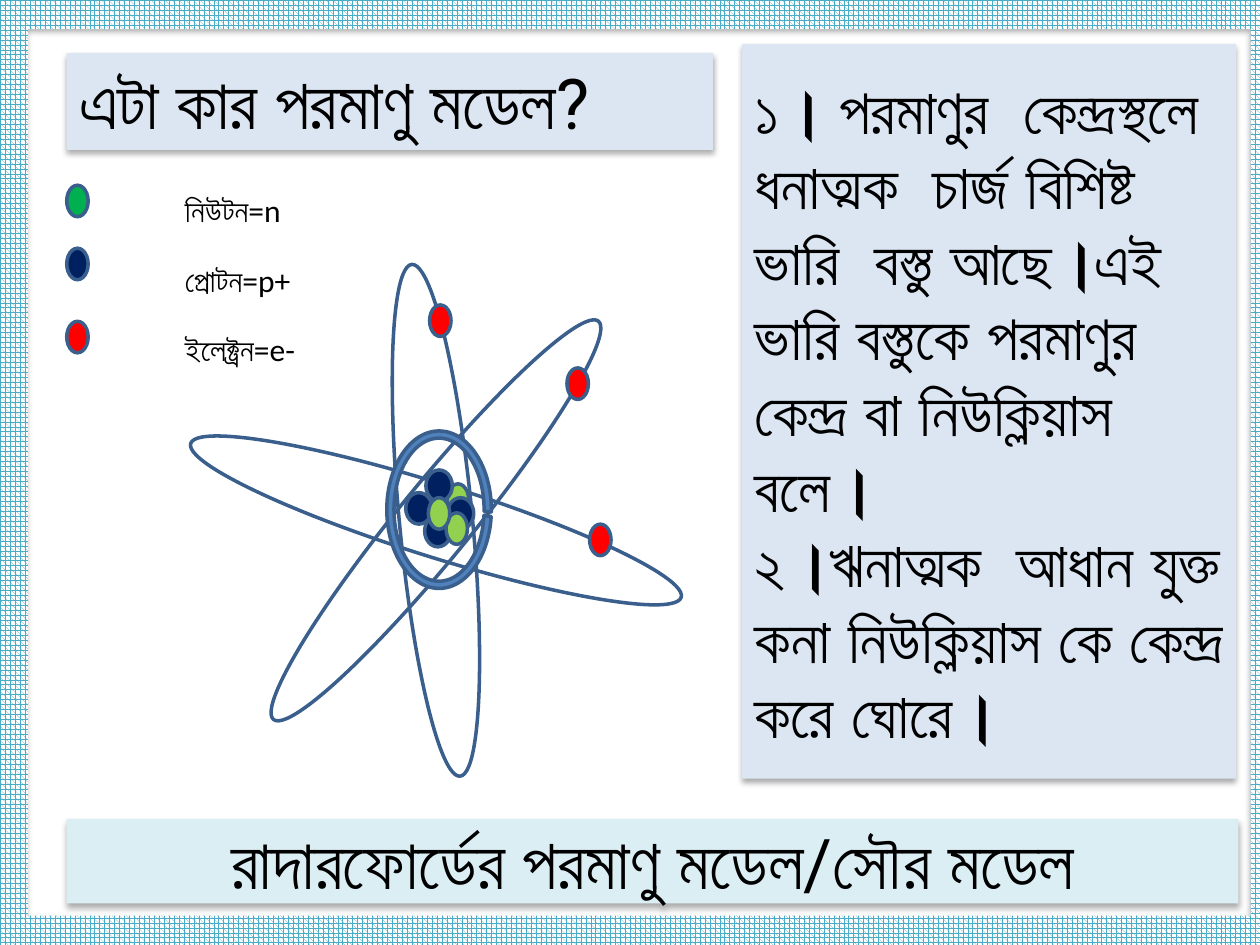
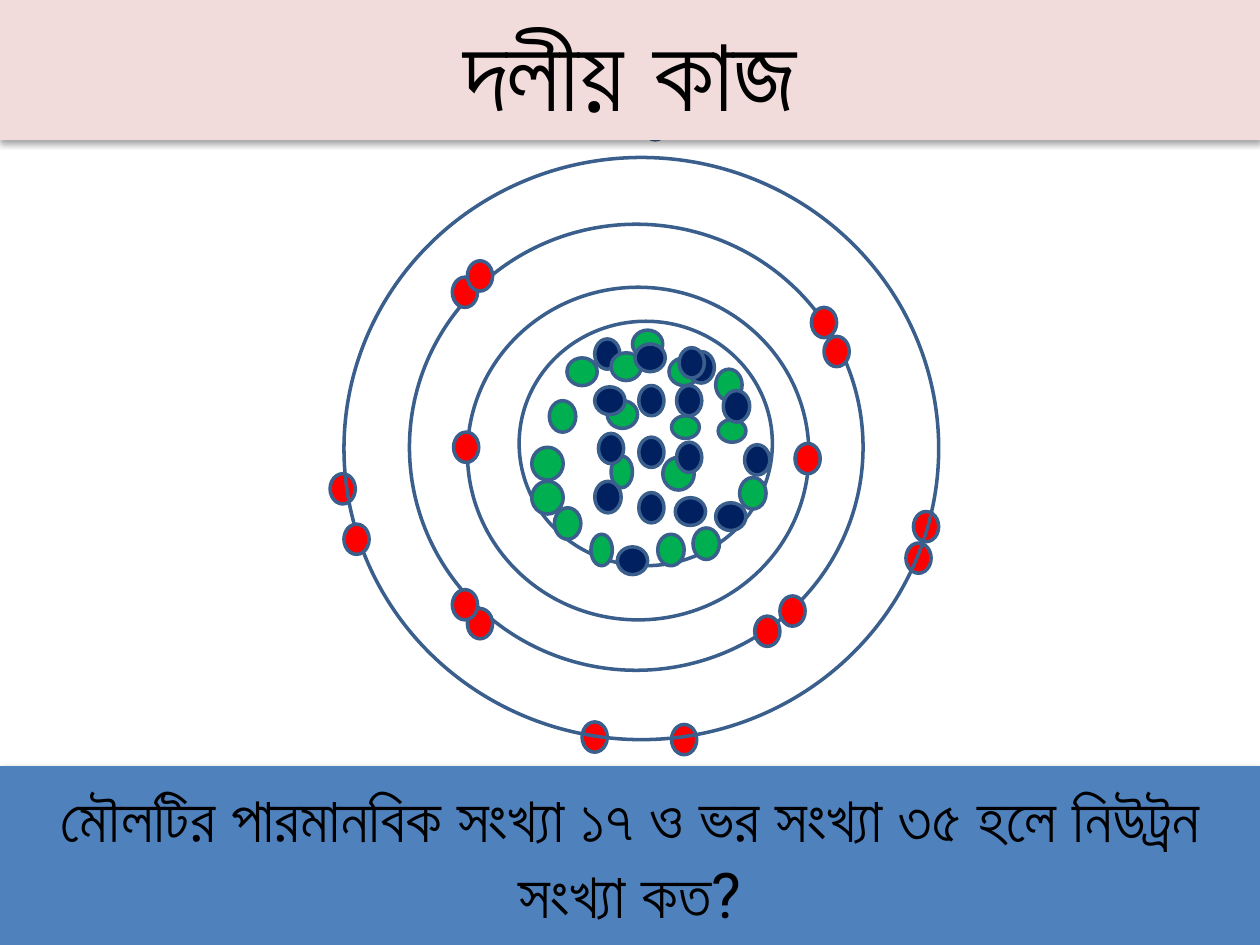
from lxml import etree
from pptx import Presentation
from pptx.dml.color import RGBColor
from pptx.enum.dml import MSO_PATTERN
from pptx.enum.shapes import MSO_SHAPE
from pptx.enum.text import MSO_ANCHOR, PP_ALIGN
from pptx.oxml import parse_xml
from pptx.oxml.ns import nsdecls
from pptx.util import Inches, Pt

# Colours and fonts
BLACK = RGBColor(0x00, 0x00, 0x00)
WHITE = RGBColor(0xFF, 0xFF, 0xFF)
OUTLINE = RGBColor(0x3A, 0x5F, 0x8C)
BLUE = RGBColor(0x4F, 0x81, 0xBD)
TEAL = RGBColor(0x4B, 0xAC, 0xC6)
PALE_BLUE = RGBColor(0xDC, 0xE6, 0xF2)
PALE_TEAL = RGBColor(0xDB, 0xEE, 0xF4)
PALE_PINK = RGBColor(0xF2, 0xDC, 0xDB)
ELECTRON = RGBColor(0xFF, 0x00, 0x00)
NEUTRON = RGBColor(0x00, 0xB0, 0x50)
LIGHT_NEUTRON = RGBColor(0x92, 0xD0, 0x50)
PROTON = RGBColor(0x00, 0x20, 0x60)
PANEL_FONT = "Roboto"
LABEL_FONT = "Calibri"

# Particle sizes (width, height)
SMALL = (0.17, 0.25)
CORE = (0.21, 0.25)
STANDARD = (0.2, 0.24)
ROUND = (0.25, 0.26)
WIDE = (0.24, 0.22)
FLAT = (0.22, 0.18)

# Group work atom: places (left, top) by particle size
NEUTRON_PLACES = {
    SMALL: [(4.85, 3.62), (4.69, 4.24)],
    CORE: [(5.22, 4.24), (4.4, 4.03), (5.68, 2.93), (4.36, 3.18), (5.87, 3.79),
           (5.5, 4.19)],
    ROUND: [(4.22, 3.55), (5.26, 3.63), (4.22, 3.82)],
    WIDE: [(5.31, 2.84), (4.5, 2.84), (5.02, 2.62), (4.82, 3.18), (4.85, 2.8)],
    FLAT: [(5.7, 3.33), (5.33, 3.3)],
}
PROTON_PLACES = {
    CORE: [(5.46, 2.79), (5.74, 3.1), (4.72, 3.82)],
    WIDE: [(5.36, 3.95), (4.9, 4.34), (4.72, 3.07), (5.04, 2.73), (5.68, 3.99)],
    STANDARD: [(4.75, 3.44), (5.37, 3.06), (5.07, 3.06), (5.37, 3.51), (5.07, 3.47),
               (5.39, 2.76), (5.07, 3.91), (5.91, 3.53)],
}
ELECTRON_PLACES = [
    (3.6, 3.43), (6.31, 3.52), (4.62, 5.73), (2.62, 3.76), (5.1, 0.87), (6.54, 2.67),
    (3.59, 2.2), (3.71, 2.07), (3.71, 4.83), (5.33, 5.75), (7.19, 4.31), (6.19, 4.73),
    (3.59, 4.68), (7.25, 4.06), (5.99, 4.89), (6.44, 2.44),
]


def add_plain_shape(slide, kind, left, top, width, height, fill=None):
    shape = slide.shapes.add_shape(
        kind, Inches(left), Inches(top), Inches(width), Inches(height))
    shape.shadow.inherit = False
    if fill is None:
        shape.fill.background()
    else:
        shape.fill.solid()
        shape.fill.fore_color.rgb = fill
    return shape


def outline(shape):
    shape.line.color.rgb = OUTLINE
    shape.line.width = Pt(2)


def add_orbit(slide, left, top, width, height, rotation=0):
    orbit = add_plain_shape(slide, MSO_SHAPE.OVAL, left, top, width, height)
    orbit.rotation = rotation
    outline(orbit)


def add_particles(slide, colour, places, size=STANDARD):
    for left, top in places:
        outline(add_plain_shape(slide, MSO_SHAPE.OVAL, left, top, *size, colour))


def add_soft_shadow(shape):
    effects = shape._element.spPr.find("{*}effectLst")
    effects.append(parse_xml(
        f'<a:outerShdw {nsdecls("a")} blurRad="{Pt(3.5)}" dist="{Pt(2.2)}" '
        'dir="5400000" rotWithShape="0"/>'))
    colour = etree.SubElement(effects[0], effects[0].tag.replace("outerShdw", "srgbClr"),
                              val=str(BLACK))
    etree.SubElement(colour, colour.tag.replace("srgbClr", "alpha"), val="32000")


def write(shape, texts, size, font=PANEL_FONT, align=PP_ALIGN.LEFT, bold=False,
          anchor=MSO_ANCHOR.MIDDLE):
    frame = shape.text_frame
    frame.word_wrap = True
    frame.vertical_anchor = anchor
    for number, text in enumerate(texts):
        paragraph = frame.add_paragraph() if number else frame.paragraphs[0]
        paragraph.text = text
        paragraph.alignment = align
        paragraph.font.size = Pt(size)
        paragraph.font.name = font
        paragraph.font.bold = bold
        paragraph.font.color.rgb = BLACK


def add_panel(slide, box, fill, texts, size, kind=MSO_SHAPE.RECTANGLE, **style):
    panel = add_plain_shape(slide, kind, *box, fill)
    panel.line.fill.background()
    add_soft_shadow(panel)
    write(panel, texts, size, **style)


def add_patterned_frame(slide):
    frame = add_plain_shape(slide, MSO_SHAPE.FRAME, -0.01, 0, 10.17, 7.5)
    frame.adjustments[0] = 0.031
    frame.fill.patterned()
    frame.fill.pattern = MSO_PATTERN.SPHERE
    frame.fill.fore_color.rgb = TEAL
    frame.fill.back_color.rgb = WHITE
    frame.line.fill.background()
    add_soft_shadow(frame)


def add_legend(slide):
    entries = [("নিউটন=n", NEUTRON, 1.47), ("প্রোটন=p+", PROTON, 1.97),
               ("ইলেক্ট্রন=e-", ELECTRON, 2.55)]
    for row, (name, colour, dot_top) in enumerate(entries):
        add_particles(slide, colour, [(0.53, dot_top)], SMALL)
        label = slide.shapes.add_textbox(
            Inches(1.37), Inches(1.47 + 0.55 * row), Inches(1.33), Inches(0.4))
        write(label, [name], 18, font=LABEL_FONT, anchor=MSO_ANCHOR.TOP)


def build_atom_model_slide(slide):
    # Orbits and electrons
    for rotation in (354.6, 287.4, 39.2):
        add_orbit(slide, 3.17, 2.09, 0.58, 4.08, rotation)
    add_particles(slide, ELECTRON, [(3.41, 2.42), (4.5, 2.92), (4.68, 4.16)], SMALL)

    # Frame, nucleus from back to front, and legend
    add_patterned_frame(slide)
    add_particles(slide, LIGHT_NEUTRON, [(3.55, 3.84)], SMALL)
    add_particles(slide, PROTON,
                  [(3.55, 3.95), (3.37, 4.09), (3.22, 3.91), (3.38, 3.73)], CORE)
    add_particles(slide, LIGHT_NEUTRON, [(3.54, 4.07), (3.4, 3.95)], SMALL)
    add_legend(slide)

    # Text panels
    add_panel(slide, (0.53, 6.5, 9.3, 0.67), PALE_TEAL,
              ["রাদারফোর্ডের পরমাণু মডেল/সৌর মডেল"], 40, align=PP_ALIGN.CENTER)
    add_panel(slide, (0.53, 0.42, 5.13, 0.77), PALE_BLUE,
              ["এটা কার পরমাণু মডেল?"], 40, anchor=MSO_ANCHOR.TOP)
    add_panel(slide, (5.89, 0.35, 3.92, 5.83), PALE_BLUE, [
        "১। পরমাণুর  কেন্দ্রস্থলে  ধনাত্মক  চার্জ বিশিষ্ট ভারি  বস্তু আছে।"
        "এই ভারি বস্তুকে পরমাণুর কেন্দ্র বা নিউক্লিয়াস বলে।",
        "২।ঋনাত্মক  আধান যুক্ত কনা নিউক্লিয়াস কে কেন্দ্র করে ঘোরে।",
    ], 36, bold=True)

    # Ring around the nucleus
    ring = add_plain_shape(slide, MSO_SHAPE.BLOCK_ARC, 3.07, 3.42, 0.83, 1.25, BLUE)
    for index, value in enumerate((4.457, 1.442, 0.069)):
        ring.adjustments[index] = value
    outline(ring)


def build_group_work_slide(slide):
    # Inner rings and nucleus
    for ring in ((3.71, 2.28, 2.71, 2.64), (4.12, 2.55, 2.01, 1.94),
                 (3.25, 1.78, 3.6, 3.54)):
        add_orbit(slide, *ring)
    add_particles(slide, PROTON, [(4.72, 2.69)])
    for colour, groups in ((NEUTRON, NEUTRON_PLACES), (PROTON, PROTON_PLACES)):
        for size, places in groups.items():
            add_particles(slide, colour, places, size)

    # Electrons and the outer ring that crosses them
    add_particles(slide, ELECTRON, ELECTRON_PLACES)
    add_orbit(slide, 2.73, 1.25, 4.72, 4.62)
    add_particles(slide, ELECTRON, [(2.73, 4.16)])

    # Question and title bands
    add_panel(slide, (0, 6.08, 10, 1.42), BLUE,
              ["মৌলটির পারমানবিক সংখ্যা ১৭ ও ভর সংখ্যা ৩৫ হলে নিউট্রন সংখ্যা কত?"],
              36, align=PP_ALIGN.CENTER)
    add_panel(slide, (0, 0, 10, 1.11), PALE_PINK, ["দলীয় কাজ"], 60,
              kind=MSO_SHAPE.FLOWCHART_PREDEFINED_PROCESS,
              align=PP_ALIGN.CENTER, bold=True)


def main():
    presentation = Presentation()
    presentation.slide_width = Inches(10)
    presentation.slide_height = Inches(7.5)
    blank = presentation.slide_layouts[6]
    for build in (build_atom_model_slide, build_group_work_slide):
        build(presentation.slides.add_slide(blank))
    presentation.save("out.pptx")


if __name__ == "__main__":
    main()
